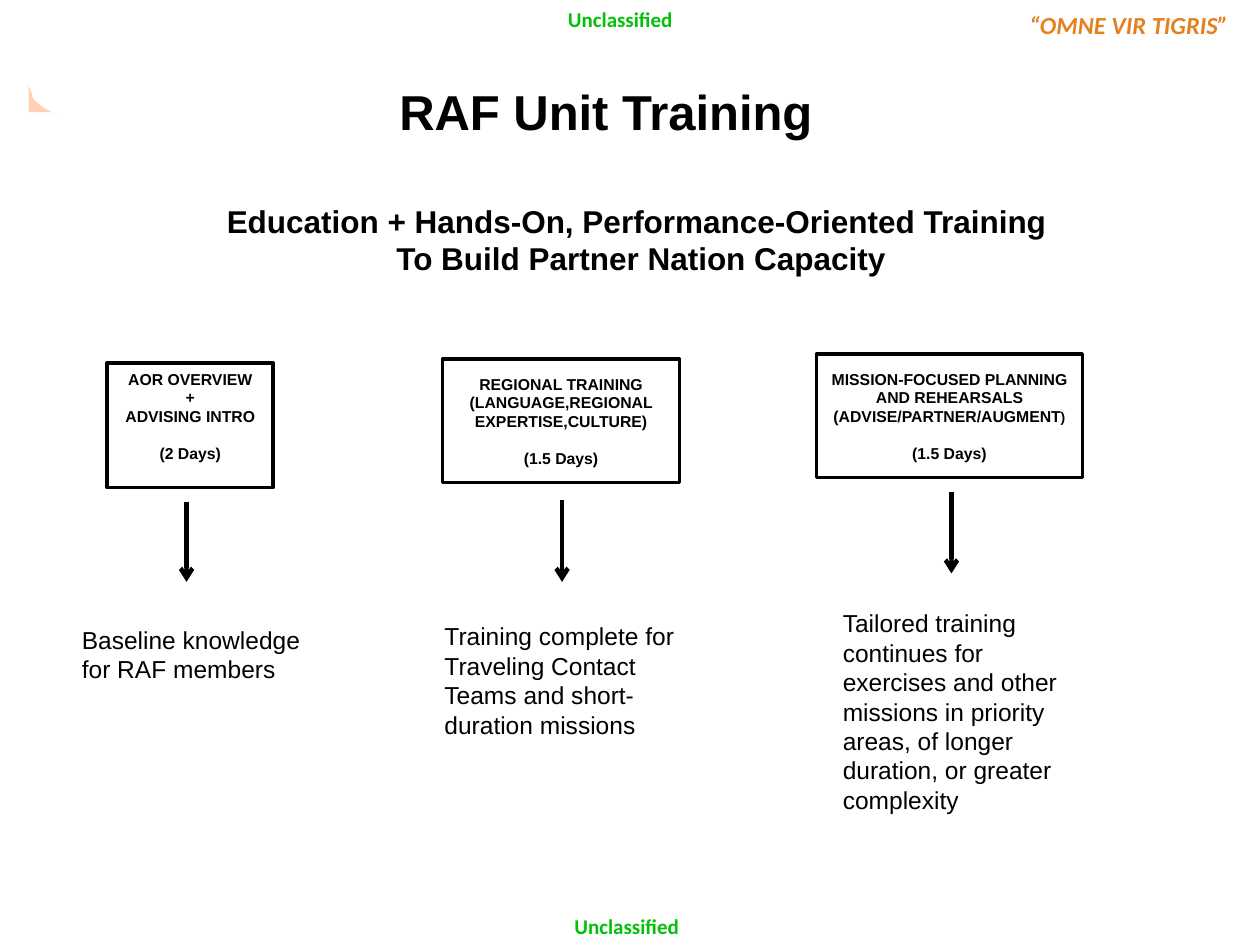
import pptx
import pptx.util
import pptx.dml.color
import pptx.enum.shapes
import pptx.enum.text
import pptx.oxml.ns
from lxml import etree

Cm = pptx.util.Cm
Pt = pptx.util.Pt
RGBColor = pptx.dml.color.RGBColor
PP_ALIGN = pptx.enum.text.PP_ALIGN
MSO_ANCHOR = pptx.enum.text.MSO_ANCHOR
qn = pptx.oxml.ns.qn

BLACK = RGBColor(0x00, 0x00, 0x00)
WHITE = RGBColor(0xFF, 0xFF, 0xFF)
GREEN = RGBColor(0x04, 0xC0, 0x08)
AMBER = RGBColor(0xE4, 0x81, 0x1E)
ORANGE = RGBColor(0xFF, 0x66, 0x00)


def style_text(tf, size, font="Arial", color=BLACK, bold=False, align=PP_ALIGN.LEFT):
    tf.word_wrap = True
    for p in tf.paragraphs:
        p.alignment = align
        for r in p.runs:
            r.font.name = font
            r.font.size = Pt(size)
            r.font.bold = bold
            r.font.color.rgb = color


def add_text(s, text, x, y, w, h, size, **style):
    tf = s.shapes.add_textbox(Cm(x), Cm(y), Cm(w), Cm(h)).text_frame
    tf.text = text
    style_text(tf, size, **style)
    return tf


prs = pptx.Presentation()
prs.slide_width = Cm(25.4)
prs.slide_height = Cm(19.05)
s = prs.slides.add_slide(prs.slide_layouts[6])

for x, y in [(11.2, 0), (11.33, 18.29)]:
    add_text(s, "Unclassified", x, y, 3, 0.76, 12, font="Calibri", color=GREEN, bold=True)

tf = add_text(s, "“OMNE VIR TIGRIS”", 20.12, 0.08, 5.28, 0.86, 14,
              font="Calibri", color=AMBER, bold=True, align=PP_ALIGN.CENTER)
tf.paragraphs[0].runs[0].font.italic = True

fb = s.shapes.build_freeform(58, 173, scale=Cm(0.01))
fb.add_line_segments([(58, 226), (114, 226), (104, 226), (89, 218),
                      (76, 208), (66, 198), (64, 188)], close=True)
corner = fb.convert_to_shape()
corner.shadow.inherit = False
corner.fill.solid()
corner.fill.fore_color.rgb = ORANGE
corner.line.fill.background()
rgb = corner.fill._xPr.find(qn("a:solidFill"))[0]
etree.SubElement(rgb, qn("a:alpha")).set("val", "29000")

add_text(s, "RAF Unit Training", 7.8, 1.52, 8.94, 1.45, 28, bold=True)
add_text(s, "Education + Hands-On, Performance-Oriented Training \nTo Build Partner Nation Capacity",
         4.24, 3.94, 17.37, 2.57, 18, bold=True, align=PP_ALIGN.CENTER)

stages = [
    ("AOR OVERVIEW\n+\nADVISING INTRO\n(2 Days)", MSO_ANCHOR.TOP,
     (2.16, 7.32, 3.35, 2.51), (3.76, 10.11, 11.73),
     "Baseline knowledge for RAF members", (1.4, 12.47, 5.21, 1.45)),
    ("REGIONAL TRAINING (LANGUAGE,REGIONAL EXPERTISE,CULTURE)\n(1.5 Days)", MSO_ANCHOR.MIDDLE,
     (8.92, 7.24, 4.78, 2.49), (11.33, 10.08, 11.73),
     "Training complete for Traveling Contact Teams and short-duration missions",
     (8.71, 12.4, 5.21, 2.64)),
    ("MISSION-FOCUSED PLANNING AND REHEARSALS (ADVISE/PARTNER/AUGMENT\n(1.5 Days)", MSO_ANCHOR.MIDDLE,
     (16.46, 7.14, 5.36, 2.49), (19.18, 9.91, 11.56),
     "Tailored training continues for exercises and other missions in priority areas, "
     "of longer duration, or greater complexity", (16.74, 12.14, 5.21, 4.45)),
]

for title, anchor, box_at, (x, top, bottom), note, note_at in stages:
    box = s.shapes.add_shape(pptx.enum.shapes.MSO_SHAPE.RECTANGLE, *map(Cm, box_at))
    box.shadow.inherit = False
    box.fill.solid()
    box.fill.fore_color.rgb = WHITE
    box.line.color.rgb = BLACK
    box.line.width = Pt(2)
    tf = box.text_frame
    tf.text = title
    tf.vertical_anchor = anchor
    style_text(tf, 9, bold=True, align=PP_ALIGN.CENTER)
    tf.paragraphs[-1].space_before = Pt(10)

    arrow = s.shapes.add_connector(pptx.enum.shapes.MSO_CONNECTOR.STRAIGHT,
                                   Cm(x), Cm(top), Cm(x), Cm(bottom))
    arrow.line.color.rgb = BLACK
    arrow.line.width = Pt(2.5)
    etree.SubElement(arrow.line._get_or_add_ln(), qn("a:tailEnd")).set("type", "arrow")
    etree.SubElement(arrow._element.spPr, qn("a:effectLst"))

    add_text(s, note, *note_at, 14)

r = tf.paragraphs[0].add_run()
r.text = ")"
r.font.name = "Arial"
r.font.size = Pt(8)
r.font.bold = True
r.font.color.rgb = BLACK

prs.save("out.pptx")
